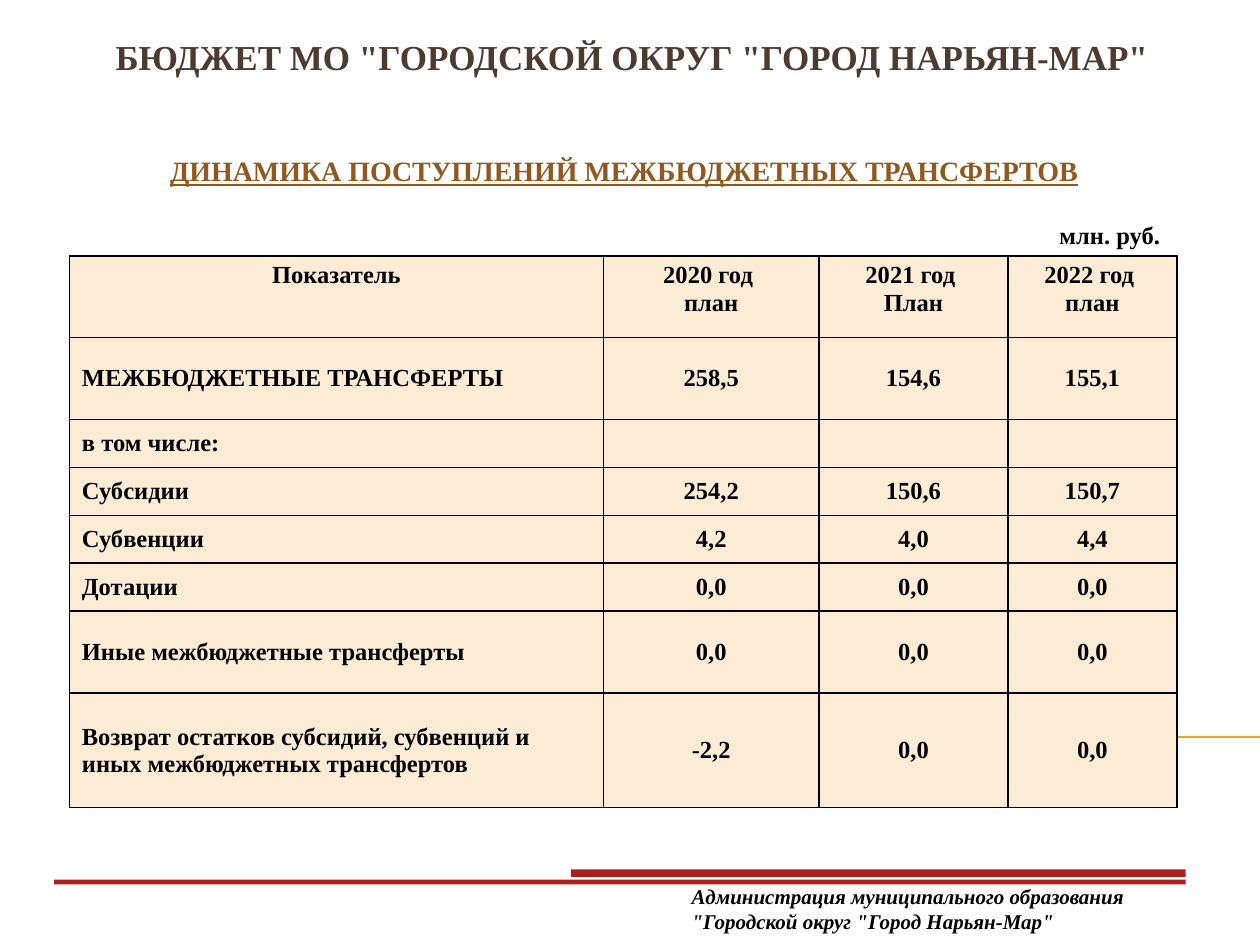
import pptx
import pptx.util
import pptx.dml.color
import pptx.enum.shapes
import pptx.enum.text
import pptx.oxml
import pptx.oxml.ns

WIDE = pptx.util.Inches(10)
HIGH = pptx.util.Inches(7.5)
FONT = "Times New Roman"
HUES = {
    "title": "4E3B30",
    "head": "91581F",
    "text": "000000",
    "cell": "FCECD5",
    "bar": "AD1F1F",
    "rule": "F0A22E",
}
COLS = [42.4, 17.1, 15, 13.4]
ROWS = [8.67, 8.67, 5.07, 5.07, 5.07, 5.07, 8.67, 12.13]
DATA = [
    ["Показатель", "2020 год \nплан", "2021 год \nПлан", "2022 год \nплан"],
    ["МЕЖБЮДЖЕТНЫЕ ТРАНСФЕРТЫ", "258,5", "154,6", "155,1"],
    ["в том числе:", "", "", ""],
    ["Субсидии", "254,2", "150,6", "150,7"],
    ["Субвенции", "4,2", "4,0", "4,4"],
    ["Дотации", "0,0", "0,0", "0,0"],
    ["Иные межбюджетные трансферты", "0,0", "0,0", "0,0"],
    ["Возврат остатков субсидий, субвенций и иных межбюджетных трансфертов",
     "-2,2", "0,0", "0,0"],
]
LEFT = pptx.enum.text.PP_ALIGN.LEFT
MID = pptx.enum.text.PP_ALIGN.CENTER


def across(share):
    return round(WIDE * share / 100)


def down(share):
    return round(HIGH * share / 100)


def place(x, y, w, h):
    return across(x), down(y), across(w), down(h)


def color(name):
    return pptx.dml.color.RGBColor.from_string(HUES[name])


def write(frame, text, size, hue="text", align=LEFT, under=None, slant=None):
    frame.text = text
    for para in frame.paragraphs:
        para.alignment = align
        for run in para.runs:
            font = run.font
            font.name, font.size = FONT, pptx.util.Pt(size)
            font.bold, font.italic, font.underline = True, slant, under
            font.color.rgb = color(hue)


def add_text(slide, area, text, size, **style):
    frame = slide.shapes.add_textbox(*place(*area)).text_frame
    frame.word_wrap = True
    write(frame, text, size, **style)


def add_bar(slide, area):
    kind = pptx.enum.shapes.MSO_SHAPE.RECTANGLE
    bar = slide.shapes.add_shape(kind, *place(*area))
    bar.shadow.inherit = False
    bar.fill.solid()
    bar.fill.fore_color.rgb = color("bar")
    bar.line.fill.background()


def add_rule(slide, start, end, y):
    kind = pptx.enum.shapes.MSO_CONNECTOR.STRAIGHT
    rule = slide.shapes.add_connector(
        kind, across(start), down(y), across(end), down(y))
    rule.line.color.rgb = color("rule")
    rule.line.width = pptx.util.Pt(0.75)
    props = rule._element.spPr
    props.append(props.makeelement(pptx.oxml.ns.qn("a:effectLst"), {}))


def edge(cell):
    props = cell._tc.get_or_add_tcPr()
    for side in "LRTB":
        props.append(pptx.oxml.parse_xml(
            f'<a:ln{side} {pptx.oxml.ns.nsdecls("a")} w="{pptx.util.Pt(1)}">'
            f'<a:solidFill><a:srgbClr val="{HUES["text"]}"/></a:solidFill>'
            f'</a:ln{side}>'))


def hang(frame):
    step = pptx.util.Inches(0.38)
    for para in frame.paragraphs:
        props = para._p.get_or_add_pPr()
        props.set("marL", str(step))
        props.set("indent", str(-step))


def fill_cell(cell, text, row, col):
    edge(cell)
    cell.fill.solid()
    cell.fill.fore_color.rgb = color("cell")
    if not text:
        cell.margin_top = cell.margin_bottom = 0
        return
    write(cell.text_frame, text, 14, align=LEFT if row and not col else MID)
    if row:
        cell.vertical_anchor = pptx.enum.text.MSO_ANCHOR.MIDDLE
    elif col:
        hang(cell.text_frame)


def add_grid(slide, x, y):
    area = place(x, y, sum(COLS), sum(ROWS))
    table = slide.shapes.add_table(len(ROWS), len(COLS), *area).table
    table.first_row = table.horz_banding = False
    for col, share in zip(table.columns, COLS):
        col.width = across(share)
    for row, share in zip(table.rows, ROWS):
        row.height = down(share)
    for r, line in enumerate(DATA):
        for c, text in enumerate(line):
            fill_cell(table.cell(r, c), text, r, c)


def main():
    deck = pptx.Presentation()
    deck.slide_width, deck.slide_height = WIDE, HIGH
    slide = deck.slides.add_slide(deck.slide_layouts[6])
    add_rule(slide, 5.6, 100, 78)
    add_text(slide, (3.9, 3.07, 92.5, 17.87),
             'БЮДЖЕТ МО "ГОРОДСКОЙ ОКРУГ "ГОРОД НАРЬЯН-МАР"',
             20, hue="title", align=MID)
    add_text(slide, (2.3, 15.6, 94.5, 6.27),
             "ДИНАМИКА ПОСТУПЛЕНИЙ МЕЖБЮДЖЕТНЫХ ТРАНСФЕРТОВ",
             16, hue="head", align=MID, under=True)
    add_grid(slide, 5.5, 27.07)
    add_text(slide, (83.1, 22.67, 10.2, 4.53), "млн. руб.", 14)
    add_bar(slide, (45.3, 92, 48.8, 0.8))
    add_bar(slide, (4.3, 93.07, 89.8, 0.53))
    add_text(slide, (53.9, 92.8, 38.6, 6.67),
             'Администрация муниципального образования '
             '"Городской округ "Город Нарьян-Мар"', 12, slant=True)
    deck.save("out.pptx")


if __name__ == "__main__":
    main()
